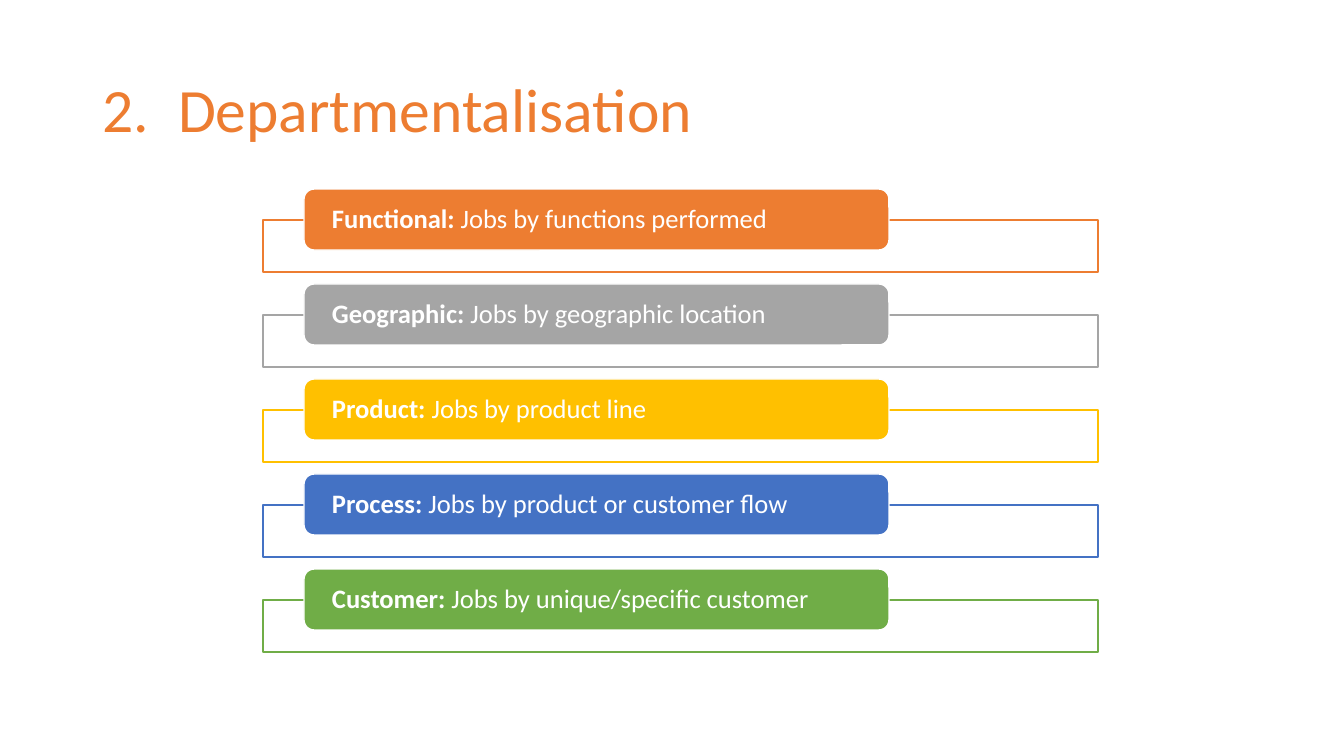
from lxml import etree
from pptx import Presentation
from pptx.dml.color import RGBColor
from pptx.enum.shapes import MSO_SHAPE
from pptx.enum.text import MSO_ANCHOR, MSO_AUTO_SIZE, PP_ALIGN
from pptx.oxml.ns import qn
from pptx.util import Pt

RECTANGLE = MSO_SHAPE.RECTANGLE
ROUNDED = MSO_SHAPE.ROUNDED_RECTANGLE
MIDDLE = MSO_ANCHOR.MIDDLE
NO_AUTOFIT = MSO_AUTO_SIZE.NONE
LEFT = PP_ALIGN.LEFT

PAGE_WIDTH, PAGE_HEIGHT = 1344, 756
SCALE = 12192000 / PAGE_WIDTH
FONT = "Calibri"
WHITE = "FFFFFF"
ORANGE = "ED7D31"
FIRST_TOP, ROW_PITCH = 189, 95

DEPARTMENTS = [
    ("Functional:", "Jobs by functions performed", ORANGE),
    ("Geographic:", "Jobs by geographic location", "A5A5A5"),
    ("Product:", "Jobs by product line", "FFC000"),
    ("Process:", "Jobs by product or customer flow", "4472C4"),
    ("Customer:", "Jobs by unique/specific customer", "70AD47"),
]


def px(length):
    return round(length * SCALE)


def color(value):
    return RGBColor.from_string(value)


def format_span(span, size, value, bold=False):
    span.font.name = FONT
    span.font.size = Pt(size)
    span.font.bold = bold
    span.font.color.rgb = color(value)


def number_paragraph(para, start, indent):
    properties = para._p.get_or_add_pPr()
    properties.set("marL", str(px(indent)))
    properties.set("indent", str(-px(indent)))
    etree.SubElement(properties, qn("a:buFont"), typeface=FONT)
    etree.SubElement(properties, qn("a:buAutoNum"), type="arabicPeriod", startAt=str(start))


def set_title(page, text):
    title = page.shapes.title
    title.left, title.top, title.width, title.height = px(92), px(40), px(1159), px(146)
    frame = title.text_frame
    frame.text = text
    frame.auto_size = NO_AUTOFIT
    frame.vertical_anchor = MIDDLE
    para = frame.paragraphs[0]
    para.alignment = LEFT
    para.line_spacing = 0.9
    number_paragraph(para, 2, 76)
    format_span(para.runs[0], 44, ORANGE)


def add_box(page, kind, left, top, width, height, fill, line):
    box = page.shapes.add_shape(kind, px(left), px(top), px(width), px(height))
    box.shadow.inherit = False
    box.fill.solid()
    box.fill.fore_color.rgb = color(fill)
    box.line.color.rgb = color(line)
    box.line.width = Pt(1)
    return box


def add_department(page, top, name, detail, accent):
    add_box(page, RECTANGLE, 263, top + 31, 835, 52, WHITE, accent)
    label = add_box(page, ROUNDED, 304, top, 585, 61, accent, WHITE)
    frame = label.text_frame
    frame.word_wrap = True
    frame.vertical_anchor = MIDDLE
    frame.margin_left = frame.margin_right = px(25)
    frame.margin_top = frame.margin_bottom = 0
    para = frame.paragraphs[0]
    para.alignment = LEFT
    para.line_spacing = 0.9
    for text, bold in ((name, True), (" " + detail, False)):
        span = para.add_run()
        span.text = text
        format_span(span, 19, WHITE, bold)


def main():
    deck = Presentation()
    deck.slide_width, deck.slide_height = px(PAGE_WIDTH), px(PAGE_HEIGHT)
    page = deck.slides.add_slide(deck.slide_layouts[5])
    set_title(page, "Departmentalisation")
    for row, department in enumerate(DEPARTMENTS):
        add_department(page, FIRST_TOP + row * ROW_PITCH, *department)
    deck.save("out.pptx")


if __name__ == "__main__":
    main()
